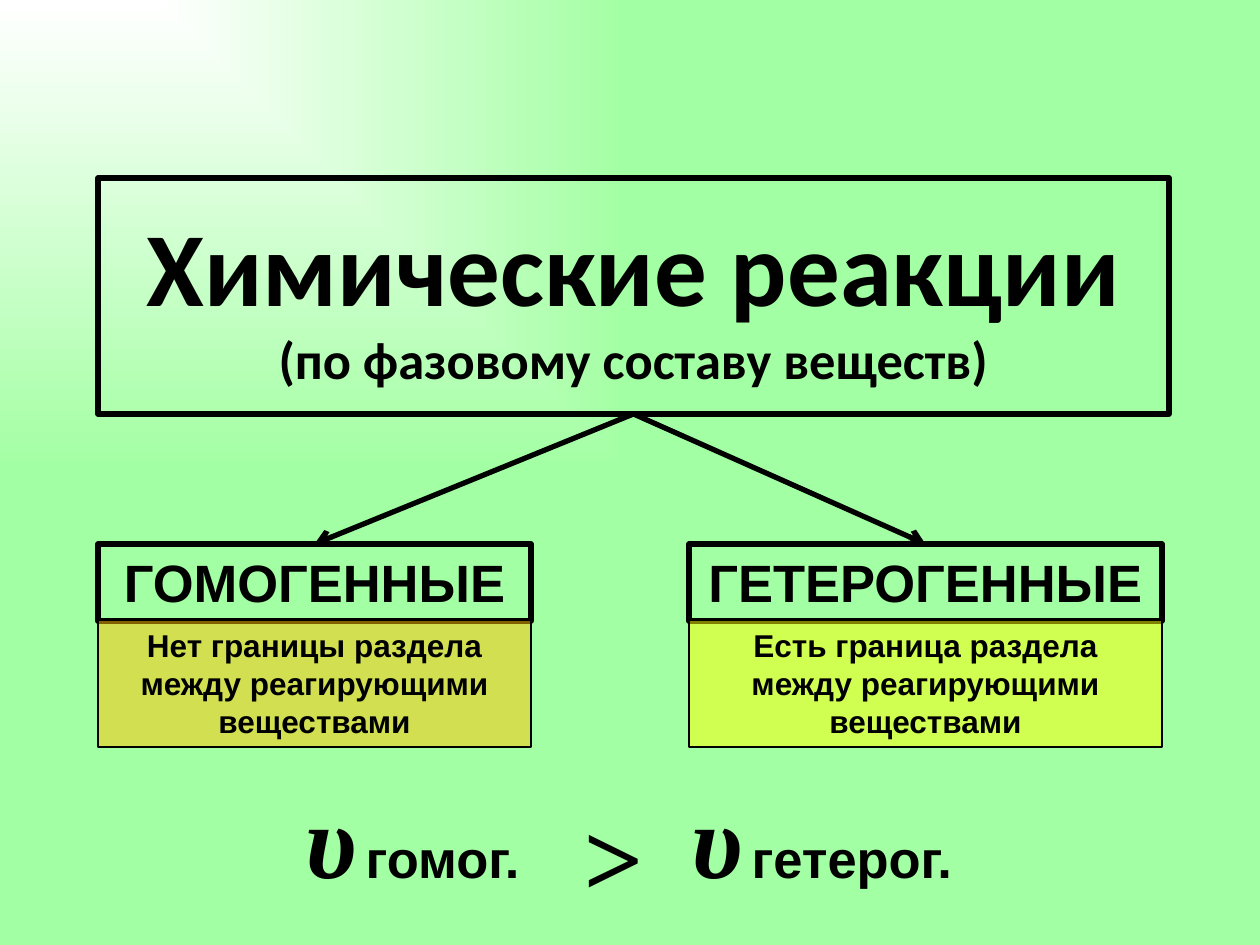
from lxml import etree
from pptx import Presentation
from pptx import util as u
from pptx.dml.color import RGBColor
from pptx.enum import shapes, text
from pptx.oxml.ns import qn

COLORS = {
    "ink": "000000",
    "glow": "FFFFFF",
    "mint": "A3FFA3",
    "amber": "FFC000",
    "yellow": "FFFF00",
}
EMU_PER_PX = 914400 / 126
LEFT, CENTER, RIGHT = text.PP_ALIGN.LEFT, text.PP_ALIGN.CENTER, text.PP_ALIGN.RIGHT
BOTTOM_SIDE, TOP_SIDE = 2, 0


def px(*lengths):
    return [u.Emu(round(length * EMU_PER_PX)) for length in lengths]


def rgb(name):
    return RGBColor.from_string(COLORS[name])


class SlideBuilder:
    def __init__(self, slide):
        self.slide = slide

    def background(self, corner, field):
        """Gradient spreading from the top left corner."""
        fill = self.slide.background.fill
        fill.gradient()
        for stop, name, position in zip(fill.gradient_stops, (corner, field), (0, 1)):
            stop.color.rgb = rgb(name)
            stop.position = position
        gradient = self.slide._element.find(".//" + qn("a:gradFill"))
        gradient.remove(gradient.find(qn("a:lin")))
        spread = etree.SubElement(gradient, qn("a:path"), {"path": "rect"})
        etree.SubElement(spread, qn("a:fillToRect"), r="100000", b="100000")

    def add_text(self, shape, runs, align=CENTER, anchor=text.MSO_ANCHOR.TOP):
        """Fill a shape with (text, size, font, italic) runs; "\\n" breaks the line."""
        frame = shape.text_frame
        frame.word_wrap = True
        frame.auto_size = text.MSO_AUTO_SIZE.NONE
        frame.vertical_anchor = anchor
        paragraph = frame.paragraphs[0]
        paragraph.alignment = align
        for words, size, font, italic in runs:
            if words == "\n":
                paragraph.add_line_break()
                continue
            run = paragraph.add_run()
            run.text = words
            run.font.size = u.Pt(size)
            run.font.name = font
            run.font.bold = True
            run.font.italic = italic
            run.font.color.rgb = rgb("ink")

    def outline(self, shape, width):
        shape.line.color.rgb = rgb("ink")
        shape.line.width = u.Pt(width)

    def title(self, box, runs):
        title = self.slide.shapes.title
        title.left, title.top, title.width, title.height = px(*box)
        self.outline(title, 3)
        self.add_text(title, runs, anchor=text.MSO_ANCHOR.MIDDLE)
        return title

    def box(self, box, words, size, line_width, fill=None):
        """Outlined rectangle, with a half-transparent fill if one is named."""
        shape = self.slide.shapes.add_shape(shapes.MSO_SHAPE.RECTANGLE, *px(*box))
        shape.shadow.inherit = False
        self.outline(shape, line_width)
        if fill:
            shape.fill.solid()
            shape.fill.fore_color.rgb = rgb(fill)
            color = shape._element.spPr.find(qn("a:solidFill") + "/" + qn("a:srgbClr"))
            etree.SubElement(color, qn("a:alpha"), val="50000")
        else:
            shape.fill.background()
        self.add_text(shape, [(words, size, "Arial", False)])
        return shape

    def label(self, box, runs, align):
        self.add_text(self.slide.shapes.add_textbox(*px(*box)), runs, align)

    def arrow(self, parent, child):
        arrow = self.slide.shapes.add_connector(shapes.MSO_CONNECTOR.STRAIGHT, 0, 0, 0, 0)
        arrow.begin_connect(parent, BOTTOM_SIDE)
        arrow.end_connect(child, TOP_SIDE)
        self.outline(arrow, 3)
        line = arrow._element.spPr.find(qn("a:ln"))
        etree.SubElement(line, qn("a:tailEnd"), type="arrow")
        etree.SubElement(arrow._element.spPr, qn("a:effectLst"))


def main():
    deck = Presentation()
    deck.slide_width, deck.slide_height = px(1260, 945)
    slide = deck.slides.add_slide(deck.slide_layouts[0])
    subtitle = slide.placeholders[1]._element
    subtitle.getparent().remove(subtitle)

    builder = SlideBuilder(slide)
    builder.background("glow", "mint")
    reactions = builder.title((98, 178, 1071, 236), [
        ("Химические реакции", 60, "Calibri", False),
        ("\n", None, None, None),
        ("(по фазовому составу веществ)", 30, "Calibri", False),
    ])

    reaction_types = [
        (98, 433, "ГОМОГЕННЫЕ", "Нет границы раздела между реагирующими веществами", "amber"),
        (689, 473, "ГЕТЕРОГЕННЫЕ", "Есть граница раздела между реагирующими веществами", "yellow"),
    ]
    for left, width, name, meaning, fill in reaction_types:
        heading = builder.box((left, 544, width, 77), name, 30, 3)
        builder.arrow(reactions, heading)
        builder.box((left, 620, width, 127), meaning, 18, 0.75, fill)

    rate = ("υ", 60, "Times New Roman", True)
    gap = (" ", 18, "Arial", False)
    for left, width, kind, align in [(276, 256, "гомог.", RIGHT), (679, 325, "гетерог.", LEFT)]:
        builder.label((left, 767, width, 140), [rate, gap, (kind, 30, "Arial", False)], align)
    builder.label((552, 785, 118, 140), [(">", 60, "Times New Roman", True)], CENTER)

    deck.save("out.pptx")


if __name__ == "__main__":
    main()
